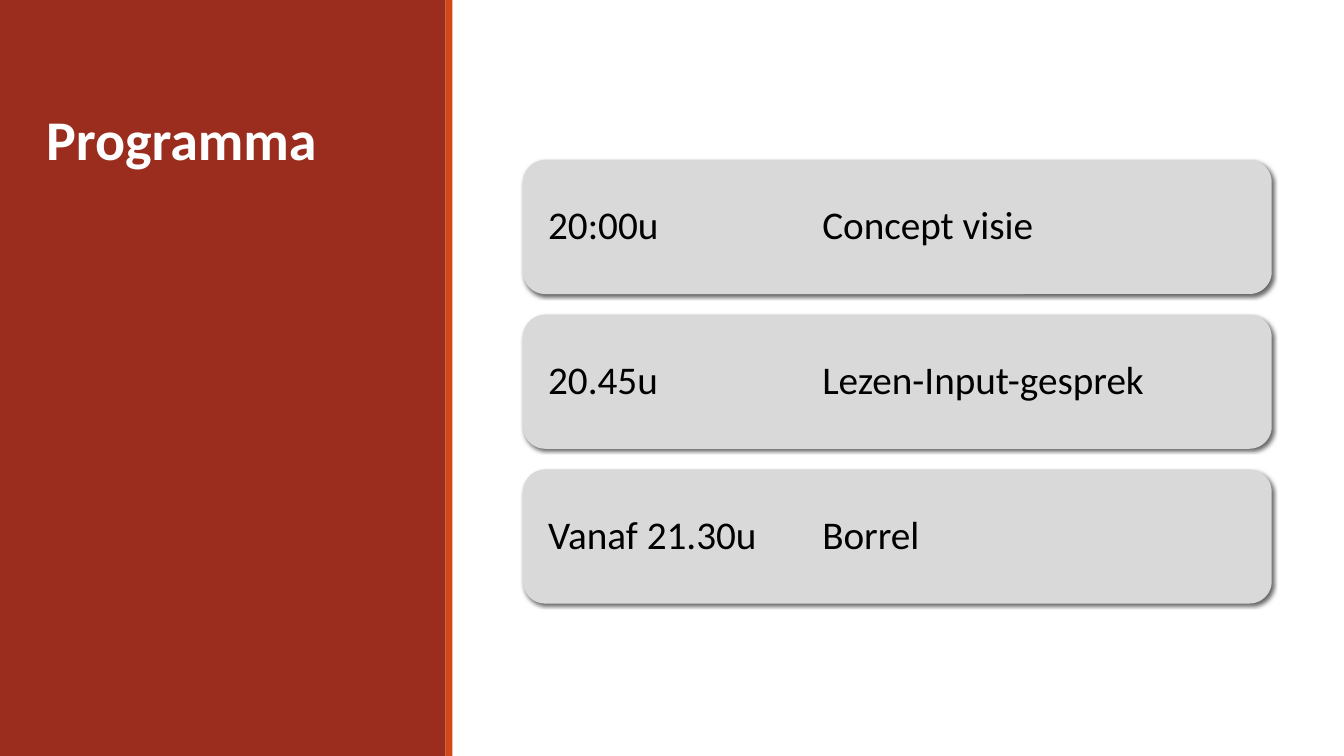
from lxml import etree
from pptx import Presentation
from pptx import util as u
from pptx.dml.color import RGBColor
from pptx.enum import shapes, text
from pptx.oxml.ns import qn

SLIDE_WIDTH, SLIDE_HEIGHT = u.Cm(33.87), u.Cm(19.05)
PANEL_WIDTH = u.Cm(11.23)
PROGRAMME = [
    "20:00u\t\tConcept visie",
    "20.45u \t\tLezen-Input-gesprek",
    "Vanaf 21.30u\tBorrel",
]
TAB_STOPS = [u.Cm(4.6), u.Cm(6.91)]


def color(hex_string):
    return RGBColor.from_string(hex_string)


def set_format(target, values):
    for name, value in values.items():
        setattr(target, name, value)


def add_block(slide, kind, box, fill):
    shape = slide.shapes.add_shape(kind, *box)
    shape.shadow.inherit = False
    shape.fill.solid()
    shape.fill.fore_color.rgb = color(fill)
    shape.line.fill.background()
    return shape


def add_shadow(shape):
    effects = shape.fill._xPr.find(qn("a:effectLst"))
    shadow = etree.SubElement(
        effects, qn("a:outerShdw"), blurRad=str(u.Pt(3)), dist=str(u.Pt(2)),
        dir=str(45 * 60000), algn="ctr", rotWithShape="0")
    black = etree.SubElement(shadow, qn("a:srgbClr"), val="000000")
    etree.SubElement(black, qn("a:alpha"), val="60000")


def add_tab_stops(paragraph):
    tabs = etree.SubElement(paragraph._p.get_or_add_pPr(), qn("a:tabLst"))
    for position in TAB_STOPS:
        etree.SubElement(tabs, qn("a:tab"), pos=str(position), algn="l")


def write_line(shape, wording, frame_format, paragraph_format, font_format, font_color):
    frame = shape.text_frame
    set_format(frame, {"word_wrap": True, **frame_format})
    paragraph = frame.paragraphs[0]
    set_format(paragraph, {"alignment": text.PP_ALIGN.LEFT, **paragraph_format})
    run = paragraph.add_run()
    run.text = wording
    set_format(run.font, {"name": "Calibri", **font_format})
    run.font.color.rgb = color(font_color)
    return paragraph


def add_title_panel(slide, left, top, width, height):
    """Red panel with an orange edge and the slide title on it."""
    rectangle = shapes.MSO_SHAPE.RECTANGLE
    add_block(slide, rectangle, (left, top, width, height), "9B2D1F")
    add_block(slide, rectangle, (left + width, top, u.Cm(0.17), height), "D34817")

    title = slide.shapes.title
    set_format(title, {"left": left + u.Cm(0.91), "top": top + u.Cm(2.51),
                       "width": u.Cm(9.93), "height": u.Cm(1.96)})
    write_line(title, "Programma",
               {"vertical_anchor": text.MSO_ANCHOR.TOP,
                "auto_size": text.MSO_AUTO_SIZE.SHAPE_TO_FIT_TEXT},
               {"space_after": u.Pt(6)},
               {"size": u.Pt(40), "bold": True}, "FFFFFF")
    slide.shapes._spTree.append(title._element)


def add_programme(slide, left, top, width, height):
    """Stack of equal cards, one for each programme item."""
    gap = u.Cm(0.52)
    count = len(PROGRAMME)
    card_height = (height - gap * (count - 1)) // count
    inset = u.Cm(0.47)
    for index, item in enumerate(PROGRAMME):
        box = (left, top + index * (card_height + gap), width, card_height)
        card = add_block(slide, shapes.MSO_SHAPE.ROUNDED_RECTANGLE, box, "D9D9D9")
        add_shadow(card)
        paragraph = write_line(
            card, item,
            {"vertical_anchor": text.MSO_ANCHOR.MIDDLE,
             "margin_left": inset, "margin_right": inset},
            {"line_spacing": 0.9}, {"size": u.Pt(28)}, "000000")
        add_tab_stops(paragraph)


def main():
    presentation = Presentation()
    set_format(presentation, {"slide_width": SLIDE_WIDTH, "slide_height": SLIDE_HEIGHT})
    slide = presentation.slides.add_slide(presentation.slide_layouts[5])
    add_title_panel(slide, 0, 0, PANEL_WIDTH, SLIDE_HEIGHT)
    add_programme(slide, u.Cm(13.18), u.Cm(4.03), u.Cm(18.87), u.Cm(11.18))
    presentation.save("out.pptx")


if __name__ == "__main__":
    main()
